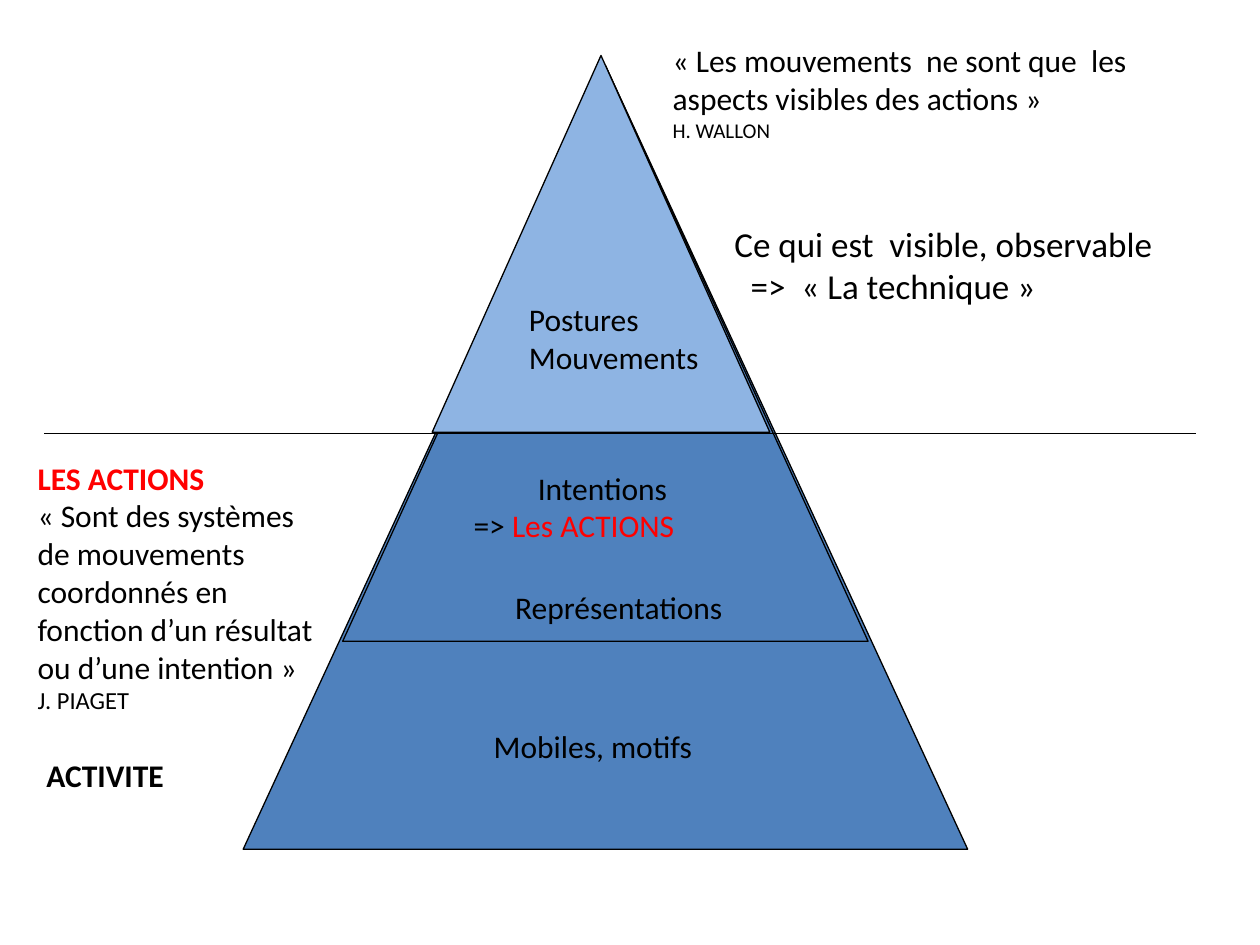
"""Build the pyramid slide on postures, actions and motives."""
import pptx
import pptx.dml.color
import pptx.enum.shapes
import pptx.enum.text
import pptx.oxml
import pptx.util

Inches = pptx.util.Inches
Pt = pptx.util.Pt
hues = {"deep": "4F81BD", "light": "8EB4E3", "ink": "000000", "red": "FF0000"}
rgb = {name: pptx.dml.color.RGBColor.from_string(code) for name, code in hues.items()}


def write(frame, paras, wrap, anchor):
    looks = {"word_wrap": wrap, "vertical_anchor": anchor}
    for key, value in looks.items():
        setattr(frame, key, value)
    for i, (indent, before, size, runs) in enumerate(paras):
        para = frame.add_paragraph() if i else frame.paragraphs[0]
        forms = {"alignment": pptx.enum.text.PP_ALIGN.LEFT, "space_before": Pt(before)}
        for key, value in forms.items():
            setattr(para, key, value)
        if indent:
            para._p.get_or_add_pPr().set("marL", str(Inches(indent)))
        for text, hue, bold in runs:
            run = para.add_run()
            run.text = text
            forms = {"name": "Calibri", "size": Pt(size), "bold": bold}
            for key, value in forms.items():
                setattr(run.font, key, value)
            run.font.color.rgb = rgb[hue]


deck = pptx.Presentation()
deck.slide_width, deck.slide_height = Inches(10), Inches(7.5)
slide = deck.slides.add_slide(deck.slide_layouts[6])
shapes = slide.shapes

layers = [
    (1.93, 0.52, 5.75, 6.22, "deep"),
    (2.72, 0.52, 4.17, 4.57, "deep"),
    (3.43, 0.44, 2.68, 2.99, "light"),
]
for *box, hue in layers:
    peak = shapes.add_shape(
        pptx.enum.shapes.MSO_SHAPE.ISOSCELES_TRIANGLE, *map(Inches, box))
    peak.shadow.inherit = False
    peak.fill.solid()
    peak.fill.fore_color.rgb = rgb[hue]
    peak.line.color.rgb = rgb["ink"]
    peak.line.width = Pt(0.75)
tops = [(0, 0, 18, [(text, "ink", False)]) for text in ("Postures", "Mouvements")]
write(peak.text_frame, tops, False, pptx.enum.text.MSO_ANCHOR.MIDDLE)

rule = shapes.add_connector(
    pptx.enum.shapes.MSO_CONNECTOR.STRAIGHT, *map(Inches, (0.35, 3.44, 9.49, 3.44)))
rule.line.color.rgb = rgb["ink"]
rule.line.width = Pt(0.75)
rule._element.spPr.append(pptx.oxml.parse_xml(
    '<a:effectLst xmlns:a="http://schemas.openxmlformats.org/drawingml/2006/main"/>'))

notes = [
    ((5.24, 0.28, 4.34, 2.52), True, [
        (0, 0, 18, [("« Les mouvements  ne sont que  les aspects visibles des actions »", "ink", False)]),
        (0, 0, 12, [("H. WALLON", "ink", False)]),
        (0.49, 46, 20, [("Ce qui est  visible, observable", "ink", False)]),
        (0.62, 0, 20, [("=>  « La technique »", "ink", False)]),
    ]),
    ((3.66, 3.67, 2.28, 0.71), True, [
        (0.51, 0, 18, [("Intentions", "ink", False)]),
        (0, 0, 18, [("=> ", "ink", False), ("Les ACTIONS", "red", False)]),
    ]),
    ((3.82, 5.72, 1.87, 0.4), False, [(0, 0, 18, [("Mobiles, motifs", "ink", False)])]),
    ((0.27, 5.95, 1.33, 0.4), True, [(0, 0, 18, [("ACTIVITE", "ink", True)])]),
    ((0.2, 3.59, 2.44, 2.15), True, [
        (0, 0, 18, [("LES ACTIONS", "red", True)]),
        (0, 0, 18, [("« Sont des systèmes de mouvements coordonnés en fonction "
                     "d’un résultat ou d’une intention »", "ink", False)]),
        (0, 0, 14, [("J. PIAGET", "ink", False)]),
    ]),
    ((3.99, 4.62, 2.02, 0.4), True, [(0, 0, 18, [("Représentations", "ink", False)])]),
]
for box, wrap, paras in notes:
    note = shapes.add_textbox(*map(Inches, box))
    write(note.text_frame, paras, wrap, pptx.enum.text.MSO_ANCHOR.TOP)

deck.save("out.pptx")
